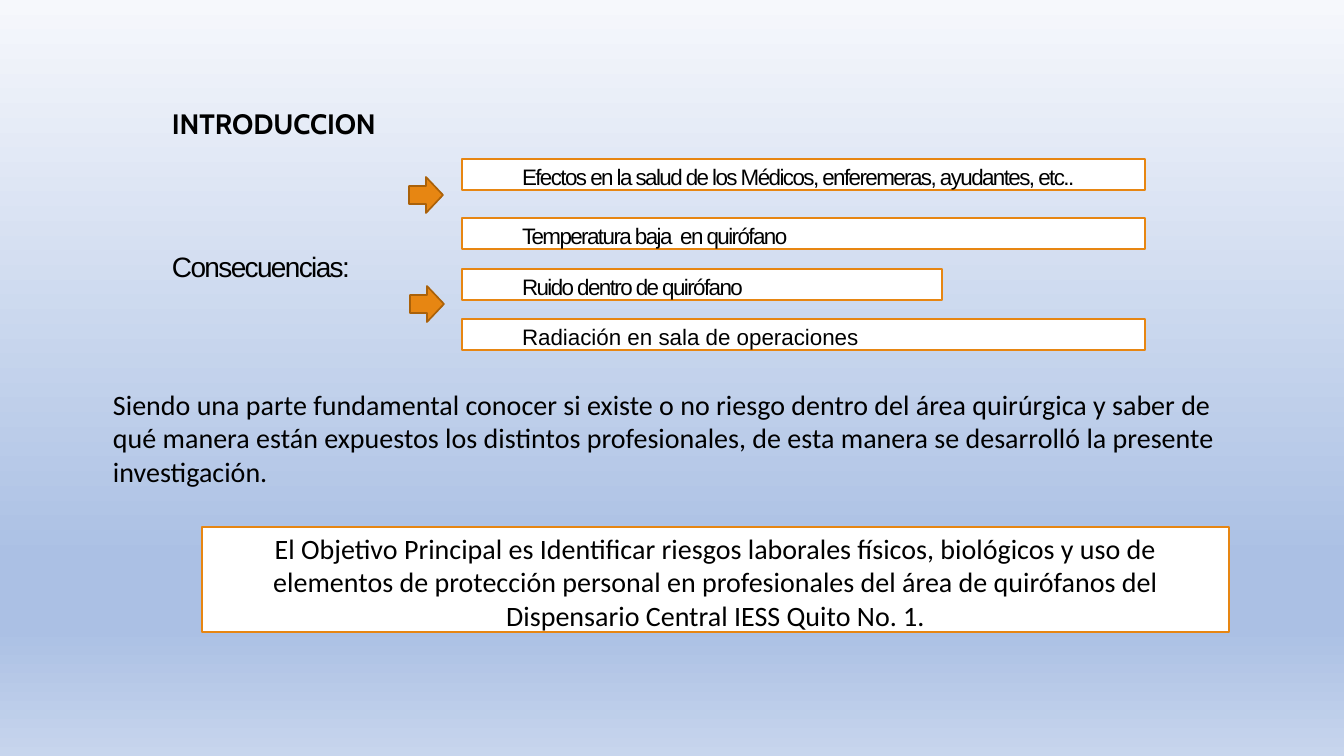
from pptx import Presentation
from pptx import util as u
from pptx.dml import color
from pptx.enum import shapes, text
from pptx.oxml import parse_xml
from pptx.oxml import ns


def rgb(value):
    return color.RGBColor.from_string(value)


class Deck:
    ORANGE, BROWN, WHITE, BLACK = "E78612", "AA6109", "FFFFFF", "000000"
    EMU_PER_PX = 914400 / 100.8

    def __init__(self, width, height):
        self.prs = Presentation()
        self.prs.slide_width, self.prs.slide_height = self.px(width, height)
        self.s = self.prs.slides.add_slide(self.prs.slide_layouts[5])

    def px(self, *values):
        return [u.Emu(round(v * self.EMU_PER_PX)) for v in values]

    def background(self, stops):
        fill = self.s.background.fill
        fill.gradient()
        fill.gradient_angle = 270
        gs_list = next(self.s._element.iter(ns.qn("a:gsLst")))
        for gs in list(gs_list):
            gs_list.remove(gs)
        for pos, value in stops:
            gs_list.append(parse_xml(
                f'<a:gs {ns.nsdecls("a")} pos="{pos * 1000}">'
                f'<a:srgbClr val="{value}"/></a:gs>'))

    def set_text(self, sp, words, font, size, insets=(0, 1, 0, 0), spacing=0,
                 bold=False, align=text.PP_ALIGN.LEFT):
        tf = sp.text_frame
        left, top, right, bottom = self.px(*insets)
        frame = dict(margin_left=left, margin_top=top, margin_right=right,
                     margin_bottom=bottom, word_wrap=True,
                     auto_size=text.MSO_AUTO_SIZE.NONE,
                     vertical_anchor=text.MSO_ANCHOR.TOP)
        for name, value in frame.items():
            setattr(tf, name, value)
        p = tf.paragraphs[0]
        for name, value in dict(alignment=align, line_spacing=1.0,
                                space_before=u.Pt(0)).items():
            setattr(p, name, value)
        r = p.add_run()
        r.text = words
        for name, value in dict(name=font, size=u.Pt(size), bold=bold).items():
            setattr(r.font, name, value)
        r.font.color.rgb = rgb(self.BLACK)
        if spacing:
            r._r.get_or_add_rPr().set("spc", str(spacing))

    def title(self, box, words, **style):
        sp = self.s.shapes.title
        sp.left, sp.top, sp.width, sp.height = self.px(*box)
        self.set_text(sp, words, **style)

    def label(self, box, words, **style):
        self.set_text(self.s.shapes.add_textbox(*self.px(*box)), words, **style)

    def shape(self, kind, box, fill, line):
        sp = self.s.shapes.add_shape(kind, *self.px(*box))
        sp.shadow.inherit = False
        sp.fill.solid()
        sp.fill.fore_color.rgb = rgb(fill)
        sp.line.color.rgb = rgb(line)
        sp.line.width = u.Pt(1.2)
        return sp

    def panel(self, box, words, **style):
        sp = self.shape(shapes.MSO_SHAPE.RECTANGLE, box, self.WHITE, self.ORANGE)
        self.set_text(sp, words, **style)

    def arrow(self, x, y):
        self.shape(shapes.MSO_SHAPE.RIGHT_ARROW, (x, y, 34, 36),
                   self.ORANGE, self.BROWN)


def main():
    deck = Deck(1344, 756)
    deck.background([(0, "F6F8FC"), (74, "ABC0E4"), (83, "ABC0E4"), (100, "C7D5ED")])
    deck.title((172, 105, 255, 35), "INTRODUCCION",
               font="Cabin", size=20, bold=True, spacing=-10)
    deck.label((172, 248, 192, 36), "Consecuencias:",
               font="Arial", size=20, spacing=-120)

    consequences = [
        (159, 683, -110, "Efectos en la salud de los Médicos, enferemeras, ayudantes, etc.."),
        (218, 683, -110, "Temperatura baja  en quirófano"),
        (269, 480, -110, "Ruido dentro de quirófano"),
        (319, 683, 0, "Radiación en sala de operaciones"),
    ]
    for y, width, spacing, words in consequences:
        deck.panel((462, y, width, 31), words, font="Arial", size=16,
                   insets=(60, 4, 0, 0), spacing=spacing)
    for x, y in [(409, 177), (410, 286)]:
        deck.arrow(x, y)

    deck.label((113, 386, 1126, 103),
               "Siendo una parte fundamental conocer si existe o no riesgo dentro del "
               "área quirúrgica y saber de qué manera están expuestos los distintos "
               "profesionales, de esta manera se desarrolló la presente investigación.",
               font="Calibri", size=20)
    deck.panel((202, 527, 1027, 105),
               "El Objetivo Principal es Identificar riesgos laborales físicos, "
               "biológicos y uso de elementos de protección personal en profesionales "
               "del área de quirófanos del Dispensario Central IESS Quito No. 1.",
               font="Calibri", size=20, insets=(27, 4, 27, 0),
               align=text.PP_ALIGN.CENTER)
    deck.prs.save("out.pptx")


if __name__ == "__main__":
    main()
